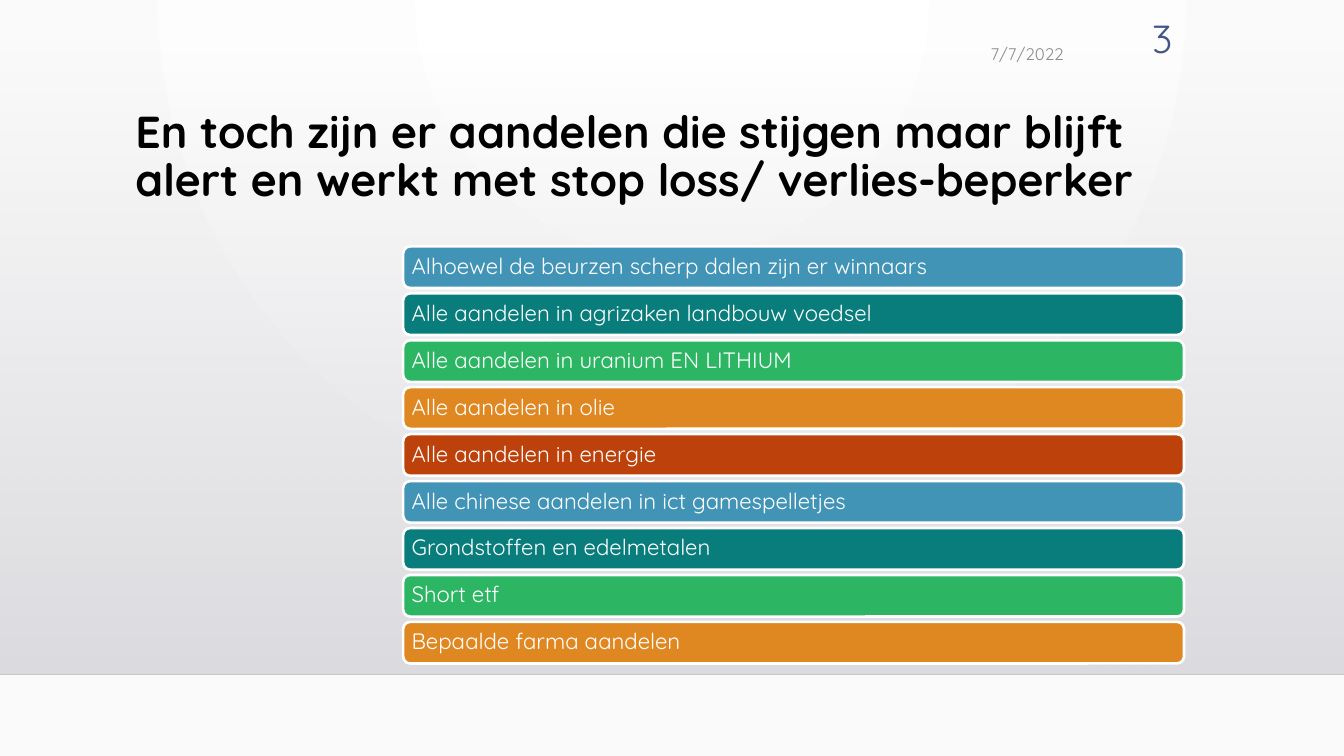
from lxml.etree import SubElement
from pptx import Presentation
from pptx.dml.color import RGBColor
from pptx.enum.shapes import MSO_CONNECTOR, MSO_SHAPE
from pptx.enum.text import MSO_ANCHOR, PP_ALIGN
from pptx.oxml.ns import qn
from pptx.util import Inches, Pt

FONT = "Quicksand"
WHITE = RGBColor(0xFF, 0xFF, 0xFF)
OFF_WHITE = RGBColor(0xFA, 0xFA, 0xFA)
BLACK = RGBColor(0x00, 0x00, 0x00)
PANEL_TOP = RGBColor(0xDC, 0xDC, 0xE0)
PANEL_BOTTOM = RGBColor(0xDE, 0xDE, 0xE2)
FLOOR_LINE = RGBColor(0x00, 0x00, 0x01)
DATE_GRAY = RGBColor(0x8C, 0x8C, 0x8C)
NUMBER_BLUE = RGBColor(0x41, 0x55, 0x88)
BAR_COLORS = [
    RGBColor(0x42, 0x94, 0xB6),
    RGBColor(0x08, 0x7D, 0x7C),
    RGBColor(0x2C, 0xB6, 0x63),
    RGBColor(0xDF, 0x88, 0x22),
    RGBColor(0xBC, 0x41, 0x0A),
]


def write(shape, text, size, color, align=PP_ALIGN.LEFT, anchor=MSO_ANCHOR.TOP):
    frame = shape.text_frame
    frame.word_wrap = True
    frame.vertical_anchor = anchor
    para = frame.paragraphs[0]
    para.text = text
    para.alignment = align
    para.font.name = FONT
    para.font.size = Pt(size)
    para.font.color.rgb = color
    return para


def set_alpha(properties, percent):
    color = next(properties.iter(qn("a:srgbClr")))
    SubElement(color, qn("a:alpha")).set("val", str(percent * 1000))


# Widescreen page, 16 to 9
deck = Presentation()
deck.slide_width = Inches(12.6)
deck.slide_height = Inches(12.6 * 9 / 16)
page = deck.slides.add_slide(deck.slide_layouts[6])

# Background: circular gradient spreading from the top centre
backdrop = page.background.fill
backdrop.gradient()
for stop, color in zip(backdrop.gradient_stops, (WHITE, OFF_WHITE)):
    stop.color.rgb = color
gradient = next(page.element.iter(qn("a:gradFill")))
gradient.remove(gradient.find(qn("a:lin")))
circle = SubElement(gradient, qn("a:path"))
circle.set("path", "circle")
focus = SubElement(circle, qn("a:fillToRect"))
for side, share in (("l", 43), ("t", 0), ("r", 43), ("b", 100)):
    focus.set(side, str(share * 1000))

# Gray panel fading in towards the floor line
panel = page.shapes.add_shape(
    MSO_SHAPE.RECTANGLE, 0, Inches(0.48), Inches(12.6), Inches(5.83))
panel.shadow.inherit = False
panel.line.fill.background()
panel.fill.gradient()
panel.fill.gradient_angle = 270
for stop, color in zip(panel.fill.gradient_stops, (PANEL_TOP, PANEL_BOTTOM)):
    stop.color.rgb = color
set_alpha(panel.element.spPr, 0)

floor = page.shapes.add_connector(
    MSO_CONNECTOR.STRAIGHT, 0, Inches(6.32), Inches(12.6), Inches(6.32))
floor.line.color.rgb = FLOOR_LINE
floor.line.width = Pt(1)
set_alpha(floor.element.spPr, 20)
SubElement(floor.element.spPr, qn("a:effectLst"))

# Title, date and slide number
title = page.shapes.add_textbox(
    Inches(1.17), Inches(0.98), Inches(9.92), Inches(1.08))
para = write(
    title,
    "En toch zijn er aandelen die stijgen maar blijft "
    "alert en werkt met stop loss/ verlies-beperker",
    30.2, BLACK)
para.font.bold = True
para.line_spacing = 0.9

date = page.shapes.add_textbox(
    Inches(7.47), Inches(0.34), Inches(2.6), Inches(0.32))
write(date, "7/7/2022", 11.3, DATE_GRAY, PP_ALIGN.RIGHT, MSO_ANCHOR.MIDDLE)

number = page.shapes.add_textbox(
    Inches(10.25), Inches(0.14), Inches(0.84), Inches(0.52))
para = write(number, "3", 26.4, NUMBER_BLUE, PP_ALIGN.RIGHT)
para.line_spacing = 0.9

# Coloured bars, one per group of shares
bar_texts = [
    "Alhoewel de beurzen scherp dalen zijn er winnaars",
    "Alle aandelen in agrizaken landbouw voedsel",
    "Alle aandelen in uranium EN LITHIUM",
    "Alle aandelen in olie",
    "Alle aandelen in energie",
    "Alle chinese aandelen in ict gamespelletjes",
    "Grondstoffen en edelmetalen",
    "Short etf",
    "Bepaalde farma aandelen",
]
for index, text in enumerate(bar_texts):
    bar = page.shapes.add_shape(
        MSO_SHAPE.ROUNDED_RECTANGLE,
        Inches(3.78), Inches(2.31 + 0.44 * index), Inches(7.32), Inches(0.39))
    bar.shadow.inherit = False
    bar.fill.solid()
    bar.fill.fore_color.rgb = BAR_COLORS[index % len(BAR_COLORS)]
    bar.line.color.rgb = WHITE
    bar.line.width = Pt(1.75)
    frame = bar.text_frame
    frame.margin_left = frame.margin_right = Inches(0.06)
    frame.margin_top = frame.margin_bottom = Inches(0.06)
    para = write(bar, text, 15, WHITE, anchor=MSO_ANCHOR.MIDDLE)
    para.line_spacing = 0.9

deck.save("out.pptx")
